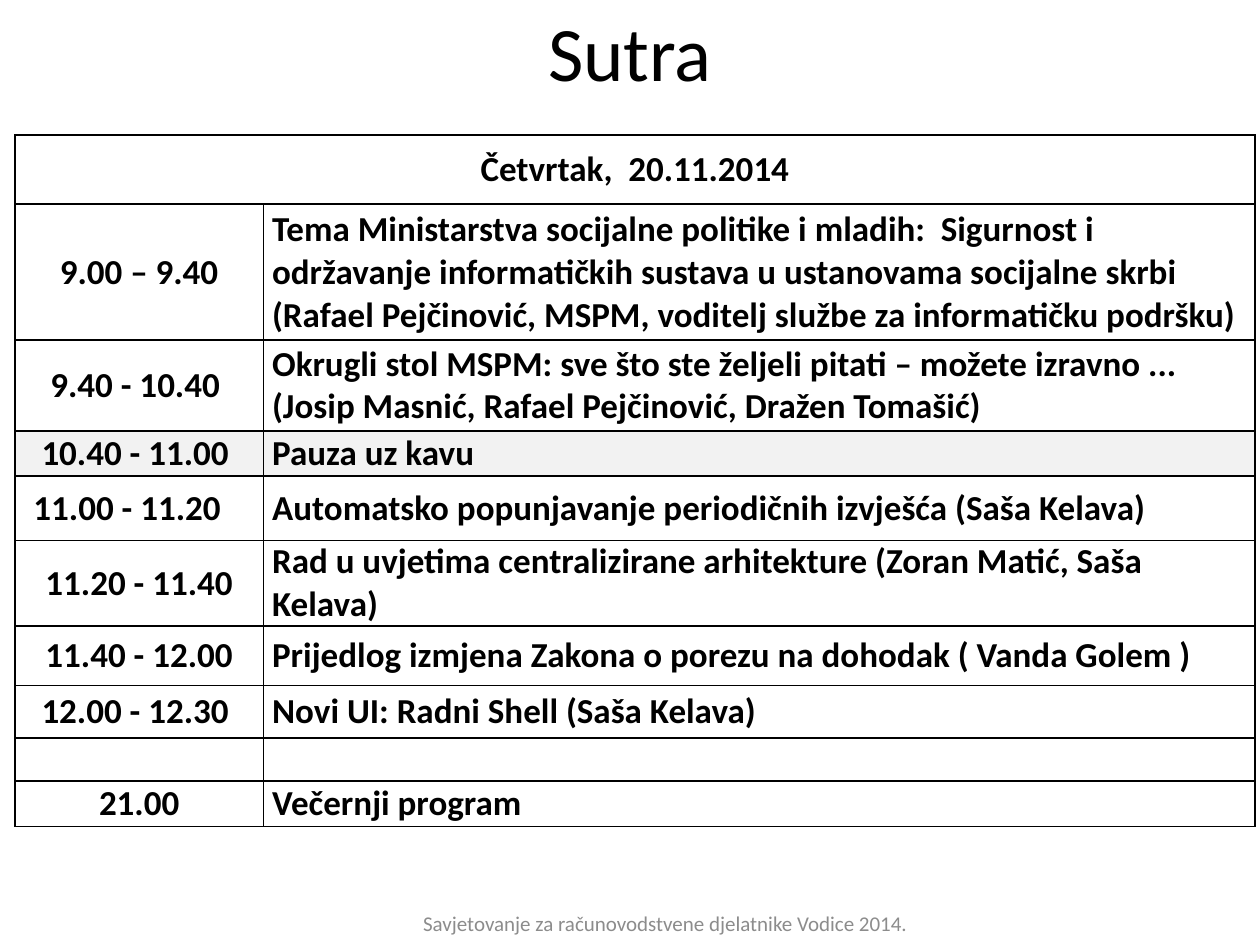
from dataclasses import dataclass

from lxml.etree import SubElement
from pptx import Presentation
from pptx.dml.color import RGBColor
from pptx.enum.text import MSO_ANCHOR as Anchor, PP_ALIGN as Align
from pptx.oxml.ns import qn
from pptx.util import Inches, Pt

WIDTH, HEIGHT = 10, 7.5
FONT = "Calibri"
COLORS = {
    "ink": "000000",
    "paper": "FFFFFF",
    "break": "F2F2F2",
    "footer": "8C8C8C",
}
COLUMN_WIDTHS = (1.97, 7.87)
TABLE_LEFT, TABLE_TOP = 0.12, 1.07
CELL_INSET = 0.07


@dataclass
class Session:
    height: float
    time: str = ""
    topic: str = ""
    fill: str = "paper"
    time_shift: float = 0  # extra right inset of the time cell


DATE = "Četvrtak,  20.11.2014"
DATE_HEIGHT = 0.55
SESSIONS = [
    Session(1.08, "9.00 – 9.40",
            "Tema Ministarstva socijalne politike i mladih:  Sigurnost i "
            "održavanje informatičkih sustava u ustanovama socijalne skrbi\n"
            "(Rafael Pejčinović, MSPM, voditelj službe za informatičku podršku)"),
    Session(0.72, "9.40 - 10.40 ",
            "Okrugli stol MSPM: sve što ste željeli pitati – možete izravno ...\n"
            "(Josip Masnić, Rafael Pejčinović, Dražen Tomašić)"),
    Session(0.36, "10.40 - 11.00 ", "Pauza uz kavu", fill="break"),
    Session(0.51, "11.00 - 11.20", "Automatsko popunjavanje periodičnih izvješća (Saša Kelava)",
            time_shift=0.19),
    Session(0.68, "11.20 - 11.40",
            "Rad u uvjetima centralizirane arhitekture (Zoran Matić, Saša Kelava)"),
    Session(0.47, "11.40 - 12.00",
            "Prijedlog izmjena Zakona o porezu na dohodak ( Vanda Golem )"),
    Session(0.42, "12.00 - 12.30 ", "Novi UI: Radni Shell (Saša Kelava)"),
    Session(0.34),
    Session(0.36, "21.00", "Večernji program"),
]


def rgb(name: str) -> RGBColor:
    return RGBColor.from_string(COLORS[name])


def write(frame, text: str, size: float, color: str, align, bold: bool = False) -> None:
    frame.text = text
    for para in frame.paragraphs:
        para.alignment = align
        for span in para.runs:
            span.font.name = FONT
            span.font.size = Pt(size)
            span.font.bold = bold
            span.font.color.rgb = rgb(color)


def add_label(page, left: float, top: float, width: float, height: float,
              text: str, size: float, color: str) -> None:
    """Add centred text; the place is given in shares of the slide."""
    box = page.shapes.add_textbox(Inches(left * WIDTH), Inches(top * HEIGHT),
                                  Inches(width * WIDTH), Inches(height * HEIGHT))
    box.text_frame.word_wrap = True
    box.text_frame.vertical_anchor = Anchor.MIDDLE
    write(box.text_frame, text, size, color, Align.CENTER)


def add_borders(cell) -> None:
    properties = cell._tc.get_or_add_tcPr()
    for index, side in enumerate(("lnL", "lnR", "lnT", "lnB")):
        line = SubElement(properties, qn(f"a:{side}"), w=str(Pt(1)))
        fill = SubElement(line, qn("a:solidFill"))
        SubElement(fill, qn("a:srgbClr"), val=COLORS["ink"])
        properties.insert(index, line)


def fill_cell(cell, text: str, align, fill: str = "paper", shift: float = 0) -> None:
    cell.margin_left = Inches(CELL_INSET)
    cell.margin_right = Inches(CELL_INSET + shift)
    cell.margin_top = cell.margin_bottom = 0
    cell.vertical_anchor = Anchor.MIDDLE
    cell.fill.solid()
    cell.fill.fore_color.rgb = rgb(fill)
    add_borders(cell)
    write(cell.text_frame, text, 20, "ink", align, bold=True)


def add_schedule(page) -> None:
    heights = [DATE_HEIGHT] + [session.height for session in SESSIONS]
    table = page.shapes.add_table(
        len(heights), len(COLUMN_WIDTHS), Inches(TABLE_LEFT), Inches(TABLE_TOP),
        Inches(sum(COLUMN_WIDTHS)), Inches(sum(heights))).table
    table.first_row = table.horz_banding = False
    for column, width in zip(table.columns, COLUMN_WIDTHS):
        column.width = Inches(width)
    for row, height in zip(table.rows, heights):
        row.height = Inches(height)

    # Date across both columns
    table.cell(0, 0).merge(table.cell(0, 1))
    fill_cell(table.cell(0, 0), DATE, Align.CENTER)
    add_borders(table.cell(0, 1))

    # One row per session
    for number, session in enumerate(SESSIONS, start=1):
        fill_cell(table.cell(number, 0), session.time, Align.CENTER,
                  session.fill, session.time_shift)
        fill_cell(table.cell(number, 1), session.topic, Align.LEFT, session.fill)


def main() -> None:
    deck = Presentation()
    deck.slide_width, deck.slide_height = Inches(WIDTH), Inches(HEIGHT)
    page = deck.slides.add_slide(deck.slide_layouts[6])

    # Footer, title and schedule
    add_label(page, 0.304, 0.95, 0.448, 0.053,
              "Savjetovanje za računovodstvene djelatnike Vodice 2014.", 12, "footer")
    add_label(page, 0.05, -0.036, 0.9, 0.179, "Sutra", 44, "ink")
    add_schedule(page)
    deck.save("out.pptx")


if __name__ == "__main__":
    main()
